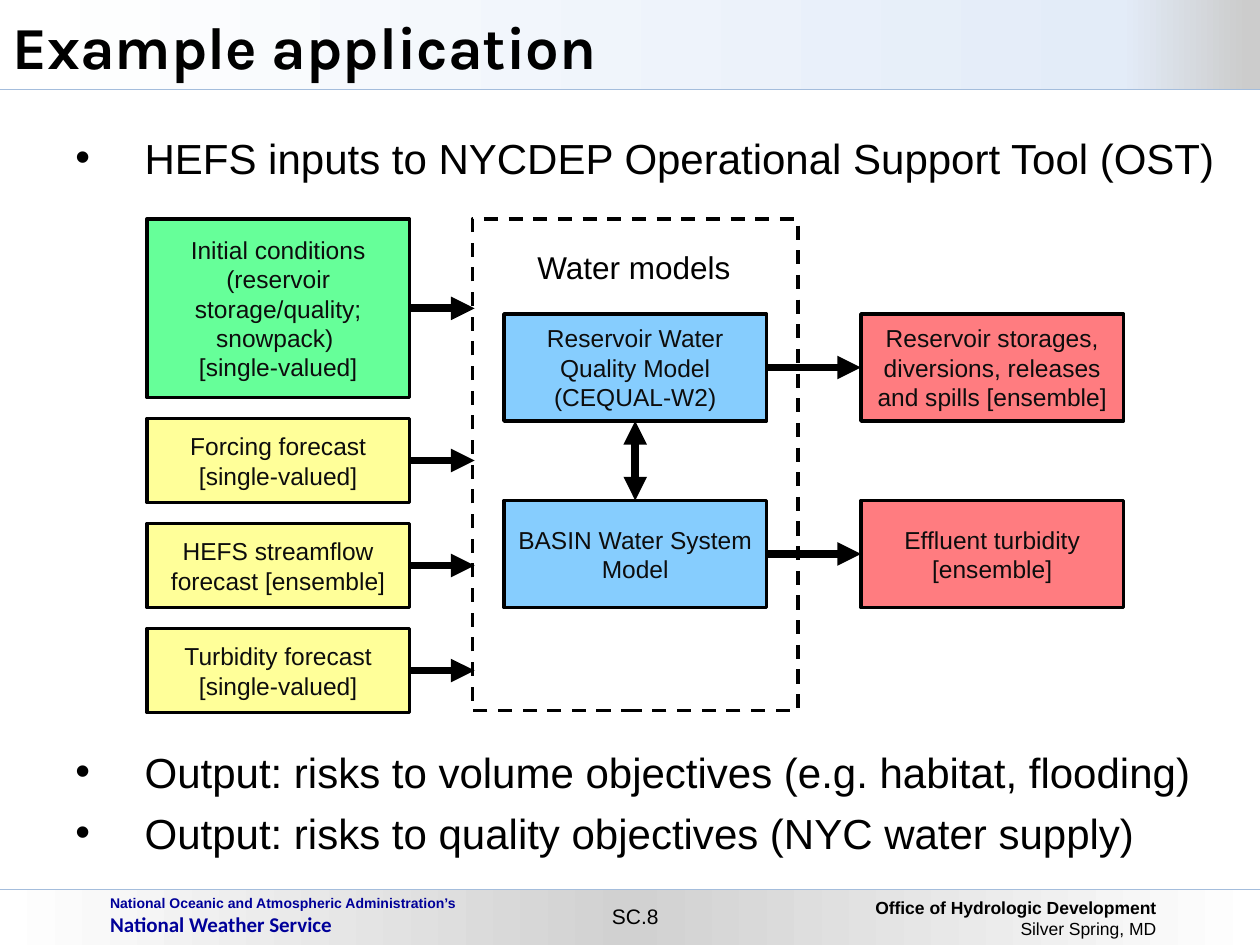
from dataclasses import dataclass
from typing import NamedTuple

from lxml.etree import SubElement
from pptx import Presentation
from pptx.dml.color import RGBColor
from pptx.enum.dml import MSO_LINE_DASH_STYLE as Dash
from pptx.enum.shapes import MSO_CONNECTOR as Connector, MSO_SHAPE as Shape
from pptx.enum.text import MSO_ANCHOR as Anchor, PP_ALIGN as Align
from pptx.oxml.ns import qn
from pptx.util import Inches, Pt

UNIT = Inches(1) / 12
COLUMNS, ROWS = 120, 90
TOP, RIGHT, BOTTOM, LEFT = 0, 3, 2, 1


@dataclass(frozen=True)
class Theme:
    font: str = "Arial"
    title_font: str = "Karla"
    agency_font: str = "Calibri"
    ink: str = "000000"
    label: str = "0D0D0D"
    paper: str = "FFFFFF"
    navy: str = "000099"
    rule: str = "A4BDDC"
    state: str = "66FF99"
    forecast: str = "FFFF99"
    model: str = "86CDFE"
    output: str = "FF7C80"
    header: tuple = ((0, "FFFFFF"), (89, "E3ECF8"), (99, "CCCCCC"))
    footer: tuple = ((0, "FFFFFF"), (50, "D1D1D1"), (100, "FFFFFF"))
    title_size: float = 34
    bullet_size: float = 24
    heading_size: float = 18
    label_size: float = 14
    number_size: float = 12
    office_size: float = 10
    small_size: float = 8


THEME = Theme()


class Area(NamedTuple):
    column: float
    row: float
    columns: float
    rows: float

    def lengths(self) -> list:
        return [round(value * UNIT) for value in self]


class Line(NamedTuple):
    text: str
    size: float
    color: str
    font: str = THEME.font
    bold: bool = False


class Node(NamedTuple):
    name: str
    area: Area
    color: str
    lines: tuple


BOX_WIDTH, INPUT_HEIGHT, MODEL_HEIGHT = 25, 8, 10.2
INPUT, MODEL, OUTPUT = (14 + 34 * index for index in range(3))
DIAGRAM_TOP, UPPER, LOWER = 20.87, 29.9, 47.66
FORECAST_TOPS = [39.86 + 10 * index for index in range(3)]
FRAME = Area(45, DIAGRAM_TOP, 31, 46.8)

NODES = (
    Node("conditions", Area(INPUT, DIAGRAM_TOP, BOX_WIDTH, 17), THEME.state,
         ("Initial conditions (reservoir storage/quality; snowpack) ", "[single-valued]")),
    Node("forcing", Area(INPUT, FORECAST_TOPS[0], BOX_WIDTH, INPUT_HEIGHT), THEME.forecast,
         ("Forcing forecast [single-valued]",)),
    Node("streamflow", Area(INPUT, FORECAST_TOPS[1], BOX_WIDTH, INPUT_HEIGHT), THEME.forecast,
         ("HEFS streamflow forecast [ensemble]",)),
    Node("turbidity", Area(INPUT, FORECAST_TOPS[2], BOX_WIDTH, INPUT_HEIGHT), THEME.forecast,
         ("Turbidity forecast [single-valued]",)),
    Node("quality", Area(MODEL, UPPER, BOX_WIDTH, MODEL_HEIGHT), THEME.model,
         ("Reservoir Water Quality Model (CEQUAL-W2)",)),
    Node("system", Area(MODEL, LOWER, BOX_WIDTH, MODEL_HEIGHT), THEME.model,
         ("BASIN Water System Model",)),
    Node("storages", Area(OUTPUT, UPPER, BOX_WIDTH, MODEL_HEIGHT), THEME.output,
         ("Reservoir storages, diversions, releases and spills [ensemble]",)),
    Node("effluent", Area(OUTPUT, LOWER, BOX_WIDTH, MODEL_HEIGHT), THEME.output,
         ("Effluent turbidity", "[ensemble]")),
)


def rgb(value: str) -> RGBColor:
    return RGBColor.from_string(value)


def write(shape, lines: list, align=Align.LEFT, anchor=Anchor.TOP) -> None:
    frame = shape.text_frame
    frame.word_wrap = True
    frame.vertical_anchor = anchor
    frame.text = "\n".join(line.text for line in lines)
    for para, line in zip(frame.paragraphs, lines):
        para.alignment = align
        for span in para.runs:
            span.font.name, span.font.size = line.font, Pt(line.size)
            span.font.bold = line.bold
            span.font.color.rgb = rgb(line.color)


def add_text(page, area: Area, lines: list, align=Align.LEFT, anchor=Anchor.TOP):
    box = page.shapes.add_textbox(*area.lengths())
    write(box, lines, align, anchor)
    return box


def add_box(page, area: Area, color: str = "", outlined: bool = False):
    box = page.shapes.add_shape(Shape.RECTANGLE, *area.lengths())
    box.shadow.inherit = False
    if color:
        box.fill.solid()
        box.fill.fore_color.rgb = rgb(color)
    else:
        box.fill.background()
    if outlined:
        box.line.color.rgb = rgb(THEME.ink)
        box.line.width = Pt(2)
    else:
        box.line.fill.background()
    return box


def add_band(page, area: Area, stops: tuple) -> None:
    band = add_box(page, area)
    band.fill.gradient()
    band.fill.gradient_angle = 0
    stop_list = band._element.spPr.find(qn("a:gradFill")).find(qn("a:gsLst"))
    stop_list.clear()
    for percent, color in stops:
        stop = SubElement(stop_list, qn("a:gs"), pos=str(percent * 1000))
        SubElement(stop, qn("a:srgbClr"), val=color)


def add_line(page, start: tuple, end: tuple, color: str, width: float, *arrowheads: str):
    points = [round(value * UNIT) for value in (*start, *end)]
    line = page.shapes.add_connector(Connector.STRAIGHT, *points)
    line.line.color.rgb = rgb(color)
    line.line.width = Pt(width)
    for arrowhead in arrowheads:
        SubElement(line.line._get_or_add_ln(), qn(f"a:{arrowhead}"), type="triangle")
    SubElement(line._element.spPr, qn("a:effectLst"))
    return line


def join(page, source, source_side: int, target, target_side: int, *arrowheads: str) -> None:
    arrow = add_line(page, (0, 0), (1, 1), THEME.ink, 4.5, *arrowheads)
    arrow.begin_connect(source, source_side)
    arrow.end_connect(target, target_side)


def add_bullets(page) -> None:
    panel = add_box(page, Area(6, 12, 112.3, 69), THEME.paper)
    texts = ("HEFS inputs to NYCDEP Operational Support Tool (OST)",
             "Output: risks to volume objectives (e.g. habitat, flooding)",
             "Output: risks to quality objectives (NYC water supply)")
    write(panel, [Line(text, THEME.bullet_size, THEME.ink) for text in texts])
    for para, gap in zip(panel.text_frame.paragraphs, (0, 322, 6)):
        para.space_before = Pt(gap)
        properties = para._p.get_or_add_pPr()
        properties.set("marL", str(Inches(0.55)))
        properties.set("indent", str(-Inches(0.55)))
        SubElement(properties, qn("a:buFont"), typeface=THEME.font)
        SubElement(properties, qn("a:buChar"), char="•")


def add_diagram(page) -> None:
    boxes = {}
    for node in NODES:
        box = boxes[node.name] = add_box(page, node.area, node.color, outlined=True)
        lines = [Line(text, THEME.label_size, THEME.label) for text in node.lines]
        write(box, lines, Align.CENTER, Anchor.MIDDLE)
    add_box(page, FRAME, outlined=True).line.dash_style = Dash.DASH
    for node in NODES:
        if node.area.column == INPUT:
            middle = node.area.row + node.area.rows / 2
            arrow = add_line(page, (INPUT + BOX_WIDTH, middle), (FRAME.column + 0.2, middle),
                             THEME.ink, 4.5, "tailEnd")
            arrow.begin_connect(boxes[node.name], RIGHT)
    join(page, boxes["quality"], RIGHT, boxes["storages"], LEFT, "tailEnd")
    join(page, boxes["system"], RIGHT, boxes["effluent"], LEFT, "tailEnd")
    join(page, boxes["quality"], BOTTOM, boxes["system"], TOP, "headEnd", "tailEnd")
    add_text(page, Area(50, 23, 21, 4.8), [Line("Water models", THEME.heading_size, THEME.ink)])


def add_furniture(page) -> None:
    add_line(page, (COLUMNS, 84.7), (0, 84.7), THEME.rule, 0.75)
    add_band(page, Area(0, 84.8, COLUMNS, ROWS - 84.8), THEME.footer)
    office = add_text(page, Area(82.7, 84.8, 28, 5.2), [
        Line("Office of Hydrologic Development", THEME.office_size, THEME.ink, bold=True),
        Line("Silver Spring, MD", THEME.office_size, THEME.ink)], Align.RIGHT)
    office.text_frame.margin_left = Inches(0.01)
    office.text_frame.margin_right = Inches(0.05)
    add_text(page, Area(9.3, 84.6, 40, 5.2), [
        Line("National Oceanic and Atmospheric Administration’s", THEME.small_size,
             THEME.navy, bold=True),
        Line("National Weather Service", THEME.number_size, THEME.navy,
             THEME.agency_font, True)])
    add_text(page, Area(56.4, 85.45, 8.2, 3.6),
             [Line("SC.8", THEME.number_size, THEME.ink)], Align.CENTER)
    add_band(page, Area(0, 0, COLUMNS, 8.6), THEME.header)
    add_line(page, (COLUMNS, 8.5), (0, 8.5), THEME.rule, 0.75)
    add_text(page, Area(0, 0, COLUMNS, 8.65), [
        Line("Example application", THEME.title_size, THEME.ink, THEME.title_font, True)],
        anchor=Anchor.MIDDLE)


def main() -> None:
    deck = Presentation()
    deck.slide_width, deck.slide_height = round(COLUMNS * UNIT), round(ROWS * UNIT)
    page = deck.slides.add_slide(deck.slide_layouts[6])
    add_furniture(page)
    add_bullets(page)
    add_diagram(page)
    deck.save("out.pptx")


if __name__ == "__main__":
    main()
